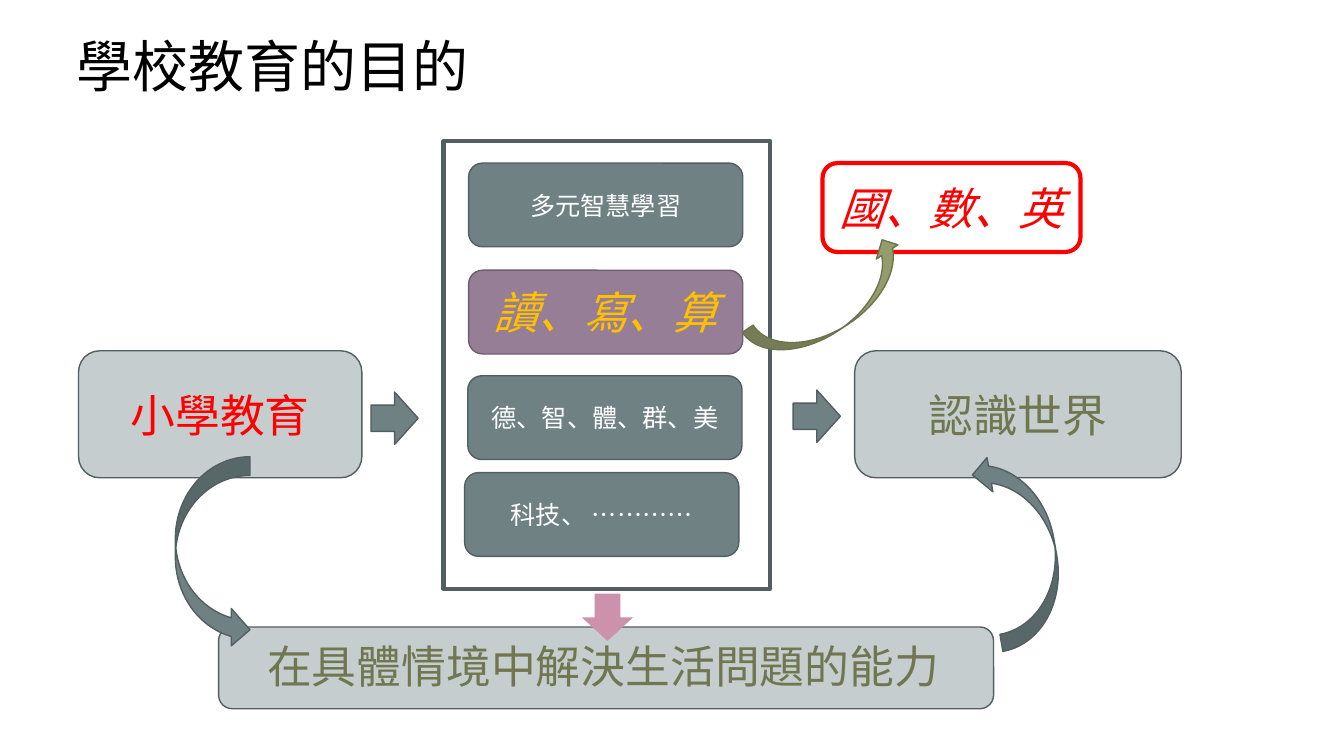
import pptx
import pptx.util
from pptx.dml.color import RGBColor
from pptx.enum.shapes import MSO_SHAPE
from pptx.enum.text import MSO_ANCHOR, MSO_AUTO_SIZE, PP_ALIGN
from pptx.oxml.ns import qn
from lxml import etree

Cm, Pt = pptx.util.Cm, pptx.util.Pt

FONT = "Noto Sans CJK JP"
BLACK = RGBColor(0x00, 0x00, 0x00)
WHITE = RGBColor(0xFF, 0xFF, 0xFF)
RED = RGBColor(0xFF, 0x00, 0x00)
GOLD = RGBColor(0xFF, 0xC0, 0x00)
PALE = RGBColor(0xC5, 0xCD, 0xCE)
SLATE = RGBColor(0x6F, 0x81, 0x83)
SLATE_EDGE = RGBColor(0x52, 0x5F, 0x61)
PURPLE = RGBColor(0x96, 0x7E, 0x96)
PURPLE_EDGE = RGBColor(0x6F, 0x5D, 0x6F)
OLIVE = RGBColor(0x94, 0x9C, 0x6B)
OLIVE_EDGE = RGBColor(0x6D, 0x73, 0x4F)
OLIVE_TEXT = RGBColor(0x70, 0x76, 0x4F)
PINK = RGBColor(0xCC, 0x91, 0xAB)

TITLE = ("學校教育的目的", (1.68, 0.51, 23.88, 2.49))
ABILITY = ("在具體情境中解決生活問題的能力", (6.48, 15.98, 17.58, 2.39))

SUBJECT_SIZE = (6.91, 2.11)
PLAIN = {"size": Pt(18), "color": WHITE}
SUBJECTS = [
    ("多元智慧學習", (11.81, 4.11), SLATE, SLATE_EDGE, PLAIN),
    ("讀、寫、算", (11.81, 6.81), PURPLE, PURPLE_EDGE,
     {"size": Pt(32), "color": GOLD, "italic": True}),
    ("德、智、體、群、美", (11.79, 9.47), SLATE, SLATE_EDGE, PLAIN),
    ("科技、 …………", (11.71, 11.91), SLATE, SLATE_EDGE, PLAIN),
]

STAGES = [
    ("小學教育", (1.98, 8.84, 7.14, 3.2), PALE, SLATE_EDGE, 1,
     {"size": Pt(32), "color": RED}),
    ("認識世界", (21.54, 8.84, 8.23, 3.2), PALE, SLATE_EDGE, 1,
     {"size": Pt(32), "color": OLIVE_TEXT}),
    ("", (5.51, 15.8, 19.53, 2.06), PALE, SLATE_EDGE, 1, {}),
    ("國、數、英", (20.73, 4.11, 6.5, 2.24), None, RED, 3,
     {"size": Pt(32), "color": RED, "italic": True}),
]

FRAME = (11.18, 3.56, 8.23, 11.28)

ARROWS = [
    (MSO_SHAPE.RIGHT_ARROW, (9.35, 9.88, 1.19, 1.32), SLATE, SLATE_EDGE, 0),
    (MSO_SHAPE.RIGHT_ARROW, (19.99, 9.83, 1.19, 1.32), SLATE, SLATE_EDGE, 0),
    (MSO_SHAPE.DOWN_ARROW, (14.66, 14.96, 1.3, 1.19), PINK, None, 0),
    (MSO_SHAPE.CURVED_UP_ARROW, (23.24, 12.95, 4.95, 1.75), SLATE, SLATE_EDGE, 260.2),
    (MSO_SHAPE.CURVED_RIGHT_ARROW, (4.42, 11.51, 1.88, 4.83), SLATE, SLATE_EDGE, 0),
    (MSO_SHAPE.CURVED_UP_ARROW, (18.69, 7.01, 4.55, 1.3), OLIVE, OLIVE_EDGE, 326.5),
]


def write(frame, wording, look, align=PP_ALIGN.CENTER, anchor=MSO_ANCHOR.MIDDLE):
    """Put one styled paragraph into a text frame."""
    frame.word_wrap = True
    frame.vertical_anchor = anchor
    paragraph = frame.paragraphs[0]
    paragraph.alignment = align
    run = paragraph.add_run()
    run.text = wording
    for key, value in {"name": FONT, **look}.items():
        if key == "color":
            run.font.color.rgb = value
        else:
            setattr(run.font, key, value)
    etree.SubElement(run.font._element, qn("a:ea"), typeface=FONT)
    return paragraph


def draw(slide, kind, box, fill, edge, width=1, turn=0):
    """Add a preset shape with its fill, outline and rotation."""
    shape = slide.shapes.add_shape(kind, *map(Cm, box))
    shape.shadow.inherit = False
    shape.rotation = turn
    if fill is None:
        shape.fill.background()
    else:
        shape.fill.solid()
        shape.fill.fore_color.rgb = fill
    if edge is None:
        shape.line.fill.background()
    else:
        shape.line.color.rgb = edge
        shape.line.width = Pt(width)
    return shape


def main():
    """Build the slide on the purpose of schooling."""
    deck = pptx.Presentation()
    deck.slide_width, deck.slide_height = Cm(33.87), Cm(19.05)
    slide = deck.slides.add_slide(deck.slide_layouts[5])

    wording, box = TITLE
    heading = slide.shapes.title
    for side, length in zip(("left", "top", "width", "height"), box):
        setattr(heading, side, Cm(length))
    write(heading.text_frame, wording, {"size": Pt(40), "color": BLACK},
          PP_ALIGN.LEFT).line_spacing = 0.9

    draw(slide, MSO_SHAPE.RECTANGLE, FRAME, None, SLATE_EDGE, 3)
    subjects = [(wording, corner + SUBJECT_SIZE, fill, edge, 1, look)
                for wording, corner, fill, edge, look in SUBJECTS]
    for wording, box, fill, edge, width, look in STAGES + subjects:
        card = draw(slide, MSO_SHAPE.ROUNDED_RECTANGLE, box, fill, edge, width)
        if wording:
            write(card.text_frame, wording, look)

    wording, box = ABILITY
    ability = slide.shapes.add_textbox(*map(Cm, box)).text_frame
    write(ability, wording, {"size": Pt(32), "color": OLIVE_TEXT},
          PP_ALIGN.LEFT, MSO_ANCHOR.TOP)
    ability.auto_size = MSO_AUTO_SIZE.SHAPE_TO_FIT_TEXT

    for kind, box, fill, edge, turn in ARROWS:
        draw(slide, kind, box, fill, edge, turn=turn)

    deck.save("out.pptx")


if __name__ == "__main__":
    main()
